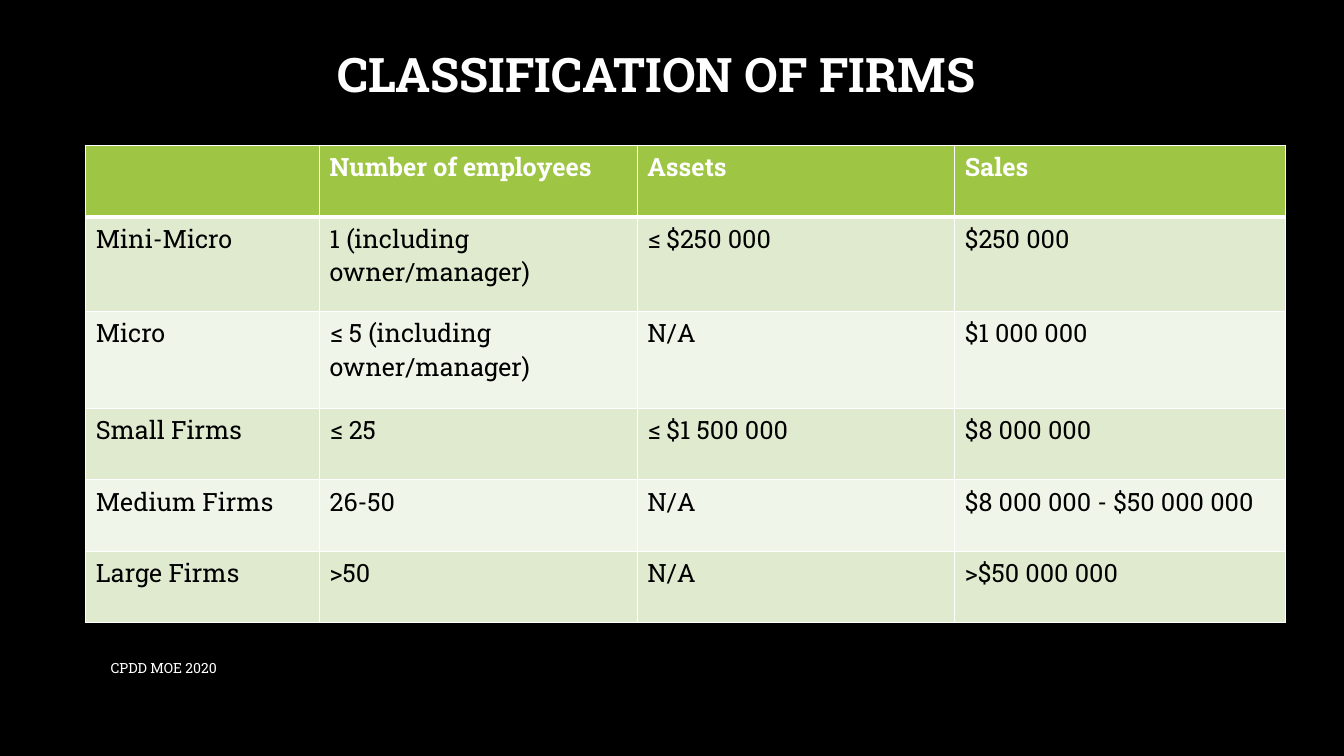
from lxml.etree import SubElement
from pptx import Presentation
from pptx.dml.color import RGBColor
from pptx.enum.text import MSO_ANCHOR, PP_ALIGN
from pptx.oxml.ns import qn
from pptx.util import Inches, Pt

FONT = "Roboto Slab"
WHITE, BLACK = "FFFFFF", "000000"
HEADER_FILL, ODD_FILL, EVEN_FILL = "9EC544", "DFEACF", "F0F5E9"
COLUMN_WIDTHS = [2.32, 3.15, 3.15, 3.28]
ROW_HEIGHTS = [0.71, 0.94, 0.96, 0.71, 0.71, 0.71]
FIRMS = [
    ["", "Number of employees", "Assets", "Sales"],
    ["Mini-Micro", "1 (including owner/manager)", "≤ $250 000", "$250 000"],
    ["Micro", "≤ 5 (including owner/manager)", "N/A", "$1 000 000"],
    ["Small Firms", "≤ 25", "≤ $1 500 000", "$8 000 000"],
    ["Medium Firms", "26-50", "N/A", "$8 000 000 - $50 000 000"],
    ["Large Firms", ">50", "N/A", ">$50 000 000"],
]


def paint(color_format, color):
    """Set a fill or font colour from a hex string."""
    color_format.rgb = RGBColor.from_string(color)


def write(frame, text, size, color, bold=False):
    """Put one formatted paragraph in a text frame and return it."""
    frame.text = text
    paragraph = frame.paragraphs[0]
    for font in [paragraph.font] + [span.font for span in paragraph.runs]:
        font.name, font.size, font.bold = FONT, Pt(size), bold
        paint(font.color, color)
    return paragraph


def place(box, left, top, width, height):
    """Move and size a shape in inches."""
    box.left, box.top = Inches(left), Inches(top)
    box.width, box.height = Inches(width), Inches(height)


def add_border(cell, side, points):
    """Draw a white line on one side of a cell."""
    properties = cell._tc.get_or_add_tcPr()
    line = SubElement(properties, qn(f"a:ln{side}"), w=str(Pt(points)))
    fill = SubElement(line, qn("a:solidFill"))
    SubElement(fill, qn("a:srgbClr"), val=WHITE)


def format_cell(cell, text, row):
    """Write a cell and style it by its row."""
    header = row == 0
    write(cell.text_frame, text, 18, WHITE if header else BLACK, header)
    for side in "LRTB":
        heavy = (header and side == "B") or (row == 1 and side == "T")
        add_border(cell, side, 3 if heavy else 1)
    cell.fill.solid()
    body_fill = ODD_FILL if row % 2 else EVEN_FILL
    paint(cell.fill.fore_color, HEADER_FILL if header else body_fill)


def add_title(page, text):
    """Fill and place the title placeholder."""
    title = page.shapes.title
    place(title, 0.85, 0.27, 11.32, 0.99)
    title.text_frame.vertical_anchor = MSO_ANCHOR.MIDDLE
    paragraph = write(title.text_frame, text, 34, WHITE, True)
    paragraph.alignment = PP_ALIGN.CENTER
    paragraph.line_spacing = 0.9


def add_firm_table(page):
    """Add the table of firm sizes."""
    table = page.shapes.add_table(
        len(FIRMS), len(COLUMN_WIDTHS), Inches(0.85), Inches(1.44),
        Inches(sum(COLUMN_WIDTHS)), Inches(sum(ROW_HEIGHTS))).table
    for column, width in zip(table.columns, COLUMN_WIDTHS):
        column.width = Inches(width)
    for row, height in enumerate(ROW_HEIGHTS):
        table.rows[row].height = Inches(height)
        for column, text in enumerate(FIRMS[row]):
            format_cell(table.cell(row, column), text, row)


def add_footer(page, text):
    """Add the small credit line below the table."""
    box = page.shapes.add_textbox(
        Inches(1), Inches(6.43), Inches(7.3), Inches(0.4))
    box.text_frame.word_wrap = True
    box.text_frame.vertical_anchor = MSO_ANCHOR.MIDDLE
    write(box.text_frame, text, 10, WHITE)


def main():
    """Build and save the slide."""
    deck = Presentation()
    deck.slide_width, deck.slide_height = Inches(13.33), Inches(7.5)
    page = deck.slides.add_slide(deck.slide_layouts.get_by_name("Title Only"))
    page.background.fill.solid()
    paint(page.background.fill.fore_color, BLACK)
    add_title(page, "CLASSIFICATION OF FIRMS")
    add_firm_table(page)
    add_footer(page, "CPDD MOE 2020")
    deck.save("out.pptx")


if __name__ == "__main__":
    main()
